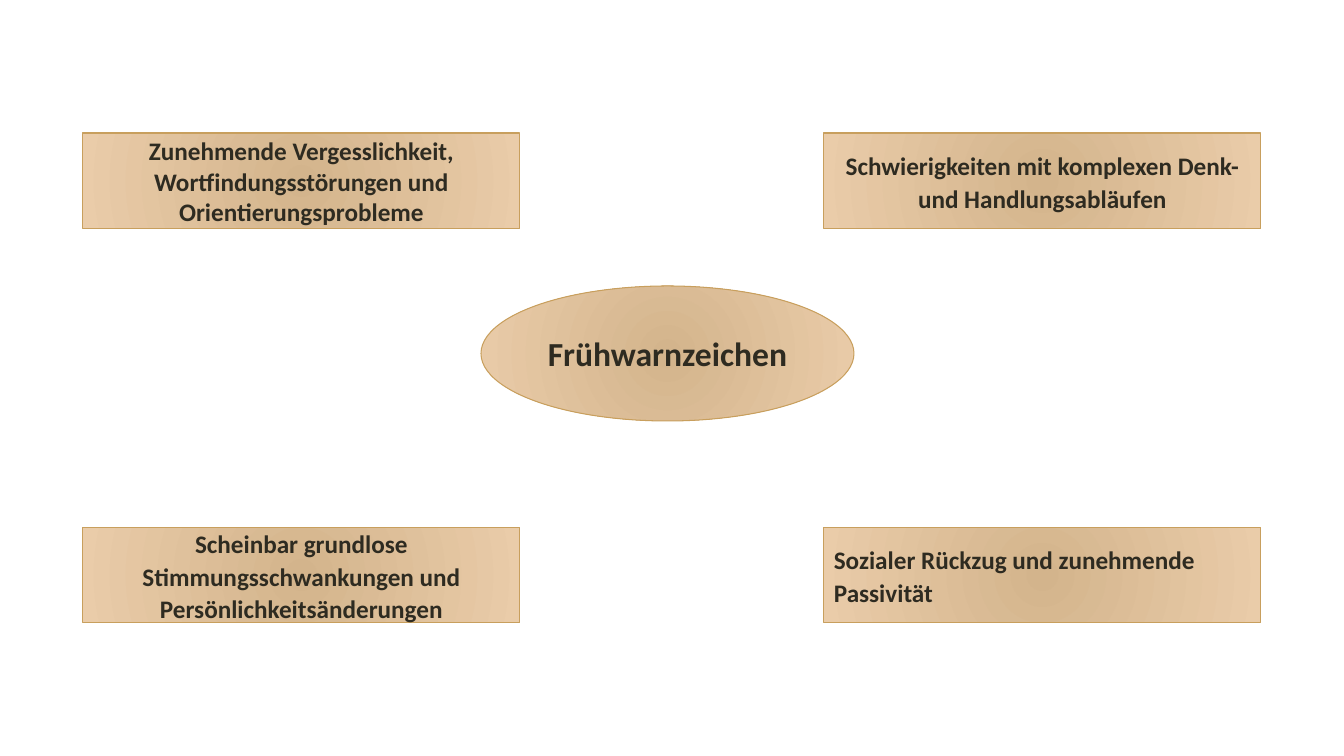
from lxml import etree
from pptx import Presentation
from pptx import util as u
from pptx.dml.color import RGBColor
from pptx.enum import shapes, text
from pptx.oxml.ns import qn

# Content: centre topic, then (text, column, row, alignment, line spacing, pt after)
CENTER, LEFT = text.PP_ALIGN.CENTER, text.PP_ALIGN.LEFT
TOPIC = "Frühwarnzeichen"
SIGNS = [
    ("Zunehmende Vergesslichkeit, Wortfindungsstörungen und Orientierungsprobleme",
     0, 0, CENTER, 1.0, 0),
    ("Schwierigkeiten mit komplexen Denk- und Handlungsabläufen", 1, 0, CENTER, 1.07, 8),
    ("Scheinbar grundlose Stimmungsschwankungen und Persönlichkeitsänderungen",
     0, 1, CENTER, 1.07, 8),
    ("Sozialer Rückzug und zunehmende Passivität", 1, 1, LEFT, 1.07, 8),
]

# Layout in px
PX = 914400 / 100.8
SLIDE_W, SLIDE_H = 1344, 756
BOX_X, BOX_Y, BOX_W, BOX_H = 83, 133, 437, 96
COL_STEP, ROW_STEP = 741, 394
TOPIC_BOX = (481, 286, 373, 135)

# Style
FONT, INK, EDGE = "Calibri", "2E2B21", "C89F5D"
GRADIENT = ("D3B48C", "EACCA9")


def px(n):
    return u.Emu(round(n * PX))


def color(value):
    return RGBColor.from_string(value)


def radial_fill(sp):
    sp.fill.gradient()
    for stop, value, pos in zip(sp.fill.gradient_stops, GRADIENT, (0, 1)):
        stop.color.rgb = color(value)
        stop.position = pos
    grad = sp._element.spPr.find(qn("a:gradFill"))
    grad.remove(grad.find(qn("a:lin")))
    circle = etree.SubElement(grad, qn("a:path"), path="circle")
    etree.SubElement(circle, qn("a:fillToRect"),
                     {side: "100000" for side in "ltrb"})


def add_label(s, kind, box, words, size, align=CENTER, spacing=1.0, after=0):
    sp = s.shapes.add_shape(kind, *map(px, box))
    sp.shadow.inherit = False
    radial_fill(sp)
    sp.line.color.rgb = color(EDGE)
    sp.line.width = u.Pt(0.75)
    tf = sp.text_frame
    tf.word_wrap = True
    tf.vertical_anchor = text.MSO_ANCHOR.MIDDLE
    p = tf.paragraphs[0]
    p.alignment, p.line_spacing, p.space_after = align, spacing, u.Pt(after)
    r = p.add_run()
    r.text = words
    r.font.name, r.font.size, r.font.bold = FONT, u.Pt(size), True
    r.font.color.rgb = color(INK)


def main():
    prs = Presentation()
    prs.slide_width, prs.slide_height = px(SLIDE_W), px(SLIDE_H)
    s = prs.slides.add_slide(prs.slide_layouts[6])

    # Centre topic
    add_label(s, shapes.MSO_SHAPE.OVAL, TOPIC_BOX, TOPIC, 24)

    # Warning signs in the four corners
    for words, col, row, align, spacing, after in SIGNS:
        box = (BOX_X + col * COL_STEP, BOX_Y + row * ROW_STEP, BOX_W, BOX_H)
        add_label(s, shapes.MSO_SHAPE.RECTANGLE, box, words, 18, align, spacing, after)

    prs.save("out.pptx")


if __name__ == "__main__":
    main()
